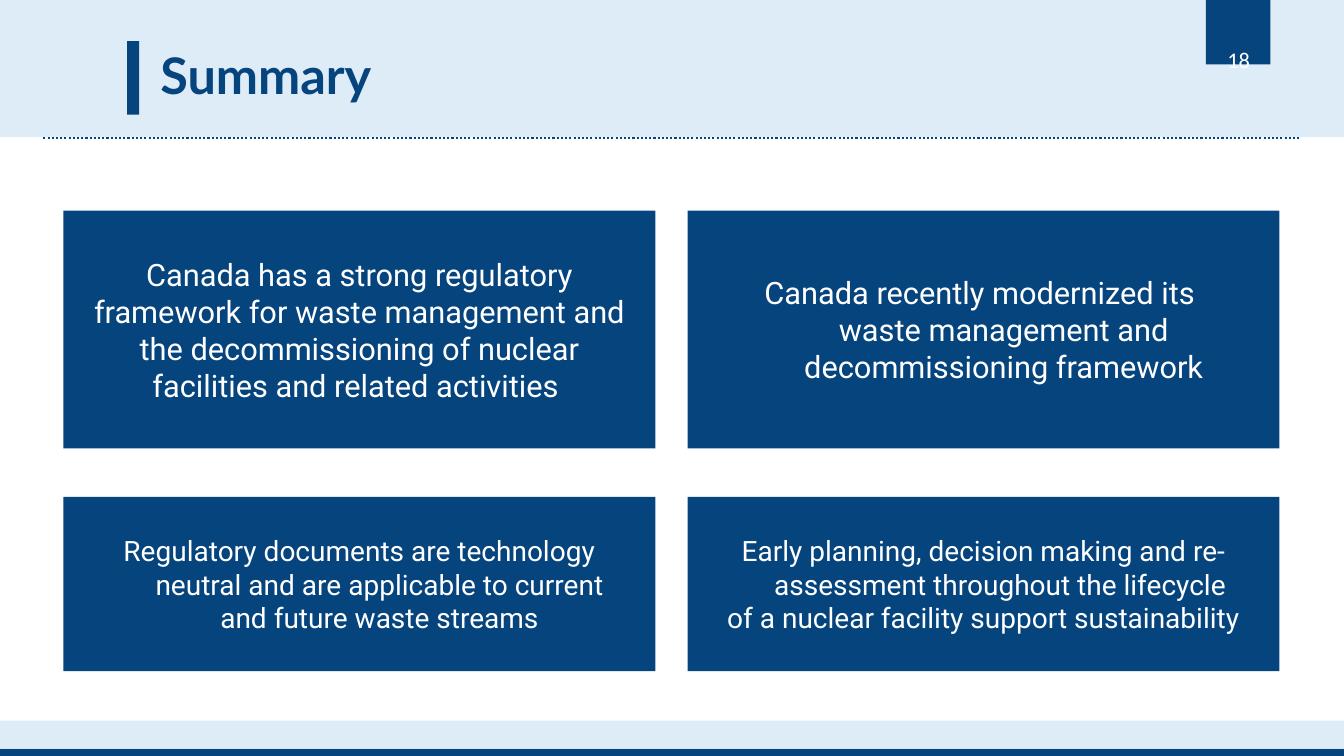
from pptx import Presentation
from pptx.dml.color import RGBColor
from pptx.enum.dml import MSO_LINE
from pptx.enum.shapes import MSO_CONNECTOR, MSO_SHAPE
from pptx.enum.text import MSO_ANCHOR, PP_ALIGN
from pptx.oxml.ns import qn
from pptx.util import Inches, Pt
from lxml.etree import SubElement

NAVY = RGBColor(0x06, 0x44, 0x7E)
PALE = RGBColor(0xDE, 0xEC, 0xF8)
WHITE = RGBColor(0xFF, 0xFF, 0xFF)

WIDTH, HEIGHT = 13.33, 7.5
HANGING = 0.4

# Card grid: column lefts, and (top, height) of each row
CARD_LEFTS = [0.63, 6.82]
CARD_WIDTH = 5.87
CARD_ROWS = [(2.09, 2.36), (4.93, 1.73)]
ROW_SIZES = [22, 20]
CARDS = [
    # each card: paragraphs, hanging indent
    [(["Canada has a strong regulatory framework for waste management and "
       "the decommissioning of nuclear facilities and related activities "], 0),
     (["Canada recently modernized its \v"
       "waste management and decommissioning framework"], HANGING)],
    [(["Regulatory documents are technology neutral and are applicable to "
       "current and future waste streams"], HANGING),
     (["Early planning, decision making and re-assessment throughout the lifecycle ",
       "of a nuclear facility support sustainability"], HANGING)],
]


def add_block(page, left, top, width, height, color):
    block = page.shapes.add_shape(MSO_SHAPE.RECTANGLE, Inches(left), Inches(top),
                                  Inches(width), Inches(height))
    block.shadow.inherit = False
    block.fill.solid()
    block.fill.fore_color.rgb = color
    block.line.fill.background()
    return block


def format_text(para, font, size, color, bold=False):
    for span in para.runs:
        span.font.name = font
        span.font.size = Pt(size)
        span.font.bold = bold
        span.font.color.rgb = color


def add_header(page, height, title_text, number):
    add_block(page, 0, 0, WIDTH, height, PALE)

    # Dotted rule under the band
    rule = page.shapes.add_connector(MSO_CONNECTOR.STRAIGHT, Inches(0.43), Inches(height + 0.01),
                                     Inches(12.88), Inches(height + 0.01))
    rule.line.color.rgb = NAVY
    rule.line.width = Pt(1.5)
    rule.line.dash_style = MSO_LINE.ROUND_DOT
    SubElement(rule._element.spPr, qn("a:effectLst"))

    # Title with its accent bar
    add_block(page, 1.26, 0.3 * height, 0.12, 0.73, NAVY)
    title = page.shapes.title
    title.left, title.top = Inches(1.49), Inches(0.35)
    title.width, title.height = Inches(10.13), Inches(0.86)
    page.shapes._spTree.append(title._element)
    frame = title.text_frame
    frame.text = title_text
    frame.vertical_anchor = MSO_ANCHOR.MIDDLE
    para = frame.paragraphs[0]
    para.alignment = PP_ALIGN.LEFT
    para.line_spacing = 0.9
    format_text(para, "Lato", 36, NAVY, bold=True)

    # Page number on its tab
    add_block(page, 11.96, 0, 0.64, 0.64, NAVY)
    box = page.shapes.add_textbox(Inches(12.01), Inches(0.41), Inches(0.55), Inches(0.4))
    box.text_frame.word_wrap = True
    box.text_frame.text = number
    para = box.text_frame.paragraphs[0]
    para.alignment = PP_ALIGN.CENTER
    format_text(para, "Calibri", 16, WHITE)


def add_card(page, left, top, width, height, paragraphs, hanging, size):
    card = add_block(page, left, top, width, height, NAVY)
    frame = card.text_frame
    frame.word_wrap = True
    frame.vertical_anchor = MSO_ANCHOR.MIDDLE
    frame.margin_left = frame.margin_right = Inches(0.28)
    frame.margin_top = frame.margin_bottom = Inches(0.05)
    for index, text in enumerate(paragraphs):
        para = frame.add_paragraph() if index else frame.paragraphs[0]
        para.text = text
        para.alignment = PP_ALIGN.CENTER
        if hanging:
            properties = para._p.get_or_add_pPr()
            properties.set("marL", str(Inches(hanging)))
            properties.set("indent", str(-Inches(hanging)))
        format_text(para, "Roboto", size, WHITE)


def add_cards(page):
    for (top, height), size, row in zip(CARD_ROWS, ROW_SIZES, CARDS):
        for left, (paragraphs, hanging) in zip(CARD_LEFTS, row):
            add_card(page, left, top, CARD_WIDTH, height, paragraphs, hanging, size)


def add_footer(page, top):
    add_block(page, 0, top, WIDTH, 0.27, PALE)
    add_block(page, 0, top + 0.28, WIDTH, HEIGHT - top - 0.28, NAVY)


def main():
    deck = Presentation()
    deck.slide_width, deck.slide_height = Inches(WIDTH), Inches(HEIGHT)
    page = deck.slides.add_slide(deck.slide_layouts[5])
    add_header(page, 1.36, "Summary", "18")
    add_cards(page)
    add_footer(page, 7.15)
    deck.save("out.pptx")


if __name__ == "__main__":
    main()
